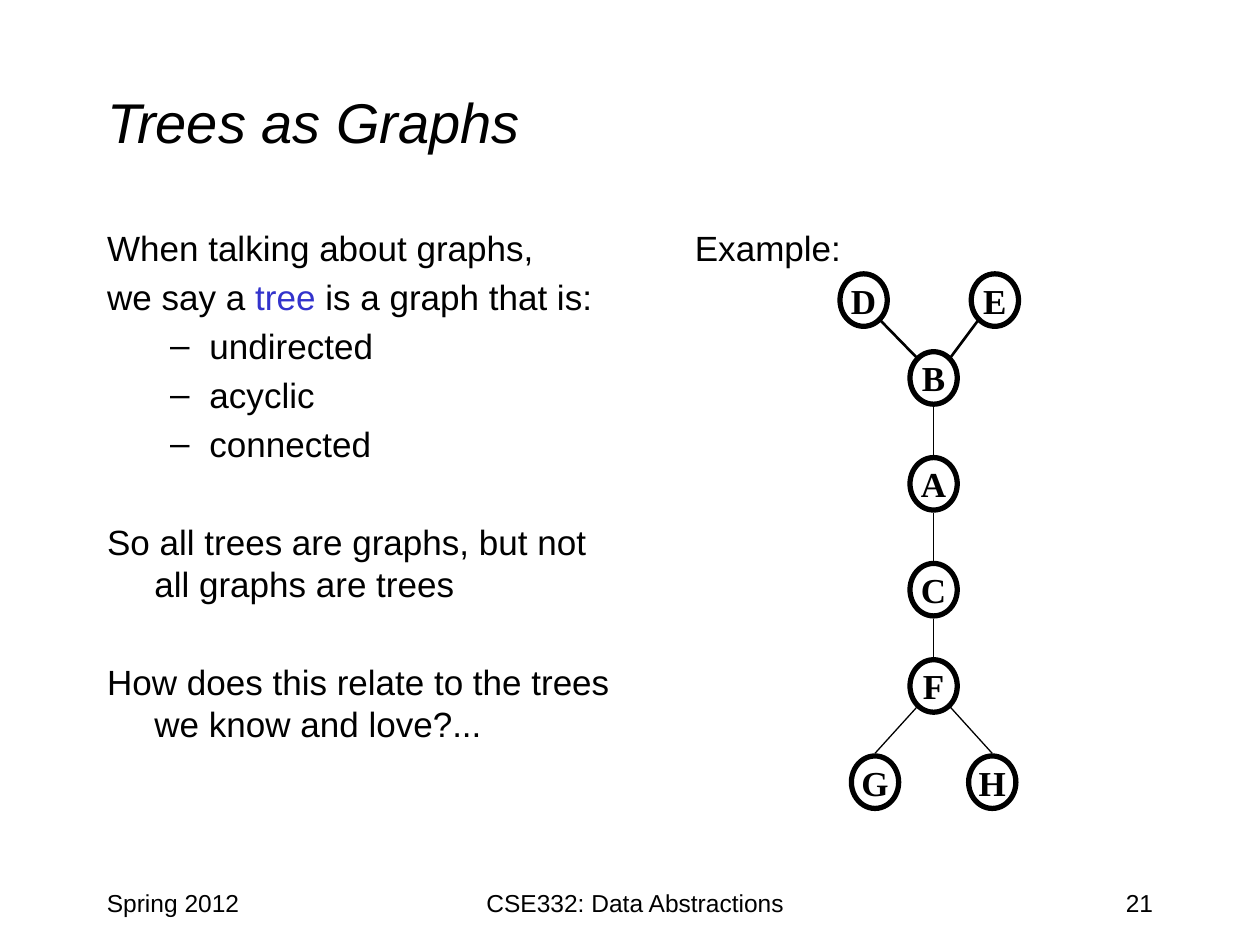
from lxml.etree import SubElement
from pptx import Presentation
from pptx.dml.color import RGBColor
from pptx.enum.shapes import MSO_CONNECTOR, MSO_SHAPE
from pptx.enum.text import MSO_ANCHOR, MSO_AUTO_SIZE, PP_ALIGN
from pptx.oxml.ns import qn
from pptx.util import Pt

COLORS = {"ink": "000000", "term": "3333CC"}


def color(name):
    return RGBColor.from_string(COLORS[name])


def add_run(par, text, size, font="Arial", tint="ink"):
    run = par.add_run()
    run.text = text
    run.font.size = Pt(size)
    run.font.name = font
    run.font.color.rgb = color(tint)
    return run


deck = Presentation()
deck.slide_width, deck.slide_height = Pt(720), Pt(540)
slide = deck.slides.add_slide(deck.slide_layouts[1])
shapes = slide.shapes

# Title
title = shapes.title
title.left, title.top, title.width, title.height = Pt(54), Pt(24), Pt(612), Pt(90)
frame = title.text_frame
frame.auto_size = MSO_AUTO_SIZE.NONE
frame.vertical_anchor = MSO_ANCHOR.MIDDLE
par = frame.paragraphs[0]
par.alignment = PP_ALIGN.LEFT
add_run(par, "Trees as Graphs", 32).font.italic = True

# Body: level, space before, runs
body = slide.placeholders[1]
body.left, body.top, body.width, body.height = Pt(54), Pt(126), Pt(306), Pt(354)
frame = body.text_frame
frame.auto_size = MSO_AUTO_SIZE.NONE
lines = [
    (0, 4, [("When talking about graphs,", "ink")]),
    (0, 4, [("we say a ", "ink"), ("tree", "term"), (" is a graph that is:", "ink")]),
    (1, 4, [("undirected", "ink")]),
    (1, 4, [("acyclic", "ink")]),
    (1, 4, [("connected", "ink")]),
    (0, 32, [("So all trees are graphs, but not all graphs are trees", "ink")]),
    (0, 32, [("How does this relate to the trees we know and love?...", "ink")]),
]
for i, (level, gap, runs) in enumerate(lines):
    par = frame.add_paragraph() if i else frame.paragraphs[0]
    par.level = level
    par.space_before = Pt(gap)
    margin, indent = [(27, -27), (58.5, -22.5)][level]
    props = par._p.get_or_add_pPr()
    props.set("marL", str(Pt(margin)))
    props.set("indent", str(Pt(indent)))
    if level:
        SubElement(props, qn("a:buChar")).set("char", "–")
    else:
        SubElement(props, qn("a:buNone"))
    for text, tint in runs:
        add_run(par, text, 20, tint=tint)

# Footer and example label
labels = [
    ("Spring 2012", 54, 504, 150, 36, 14, PP_ALIGN.LEFT),
    ("CSE332: Data Abstractions", 228, 504, 270, 36, 14, PP_ALIGN.CENTER),
    ("21", 516, 504, 150, 36, 14, PP_ALIGN.RIGHT),
    ("Example:", 390, 126, 98.5, 31.5, 20, PP_ALIGN.LEFT),
]
for text, left, top, width, height, size, align in labels:
    box = shapes.add_textbox(Pt(left), Pt(top), Pt(width), Pt(height))
    box.text_frame.word_wrap = True
    par = box.text_frame.paragraphs[0]
    par.alignment = align
    add_run(par, text, size)

# Tree: node centres, then edges as offsets from the two centres
nodes = {
    "D": (493.5, 171.5), "E": (568.5, 171.5), "B": (533.5, 216),
    "A": (533.5, 276.5), "C": (533.5, 337), "F": (533.5, 392),
    "G": (500, 447), "H": (567, 447),
}
down, up = (0, 16.5), (0, -16.5)
edges = [
    ("B", (-9.5, -11.5), "D", (9.5, 11.5), 1.5),
    ("B", (9.5, -11.5), "E", (-9.5, 11.5), 1.5),
    ("B", down, "A", up, 0.75),
    ("A", down, "C", up, 0.75),
    ("C", down, "F", up, 0.75),
    ("F", (-9.5, 12), "G", up, 0.75),
    ("F", (9.5, 12), "H", up, 0.75),
]
for first, (dx, dy), last, (ex, ey), weight in edges:
    (x, y), (u, v) = nodes[first], nodes[last]
    edge = shapes.add_connector(
        MSO_CONNECTOR.STRAIGHT, Pt(x + dx), Pt(y + dy), Pt(u + ex), Pt(v + ey))
    edge.line.color.rgb = color("ink")
    edge.line.width = Pt(weight)
    SubElement(edge._element.spPr, qn("a:effectLst"))

wide, high = 27, 30
for name, (x, y) in nodes.items():
    node = shapes.add_shape(
        MSO_SHAPE.OVAL, Pt(x - wide / 2), Pt(y - high / 2), Pt(wide), Pt(high))
    node.shadow.inherit = False
    node.fill.background()
    node.line.color.rgb = color("ink")
    node.line.width = Pt(3)
    frame = node.text_frame
    frame.word_wrap = False
    frame.vertical_anchor = MSO_ANCHOR.MIDDLE
    par = frame.paragraphs[0]
    par.alignment = PP_ALIGN.CENTER
    add_run(par, name, 20, "Times New Roman").font.bold = True

deck.save("out.pptx")
